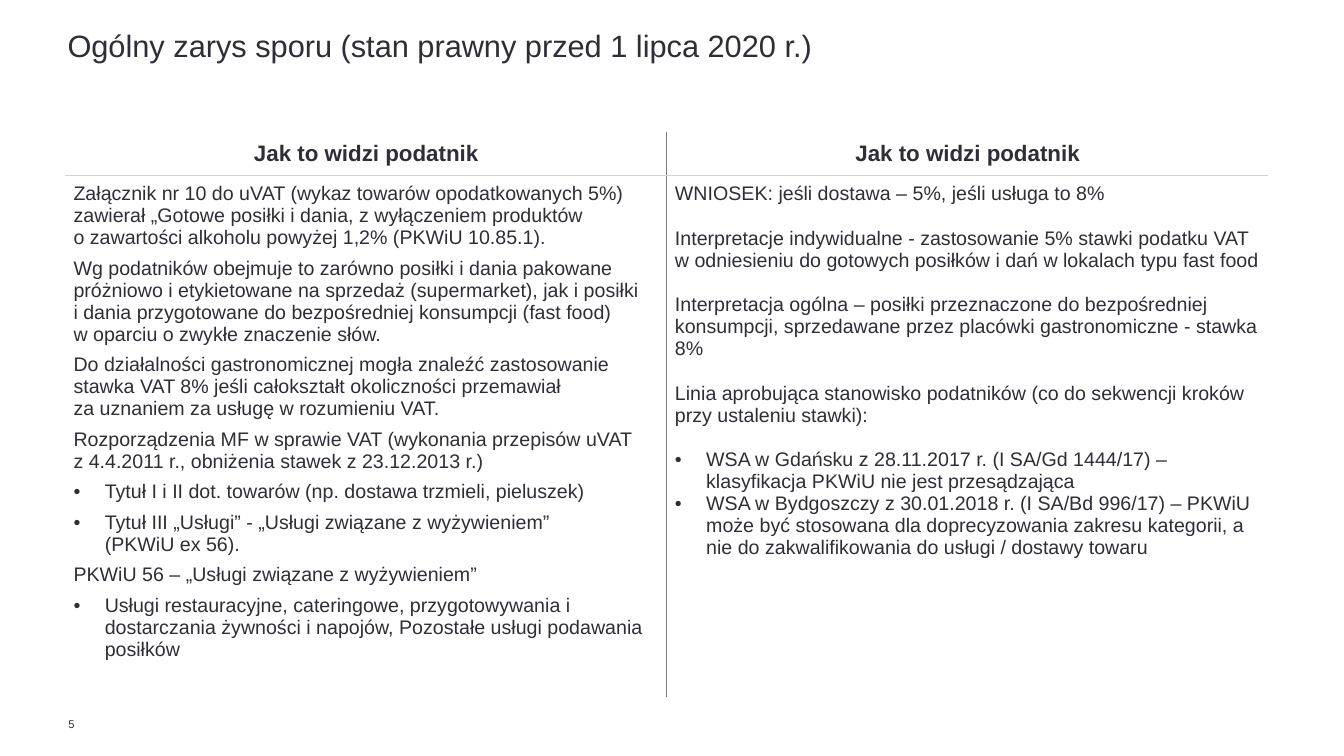
from lxml.etree import SubElement
from pptx import Presentation
from pptx.dml.color import RGBColor
from pptx.enum.text import MSO_ANCHOR, PP_ALIGN
from pptx.oxml.ns import qn
from pptx.util import Inches, Pt

HUES = {"ink": "2E2E38", "white": "FFFFFF", "rule": "D2D2DA", "split": "797991"}
W, H = 13.34, 7.5
COL, HEAD, BODY = 5.97, 0.42, 4.89
PAD = 0.08
INDENT = 0.31

# Each entry: text, bulleted, space before
LEFT = [
    ("Załącznik nr 10 do uVAT (wykaz towarów opodatkowanych 5%) zawierał „Gotowe posiłki i dania, "
     "z wyłączeniem produktów \no zawartości alkoholu powyżej 1,2% (PKWiU 10.85.1).", False, 0),
    ("Wg podatników obejmuje to zarówno posiłki i dania pakowane próżniowo i etykietowane na sprzedaż "
     "(supermarket), jak i posiłki \ni dania przygotowane do bezpośredniej konsumpcji (fast food) "
     "\nw oparciu o zwykłe znaczenie słów.", False, 0),
    ("Do działalności gastronomicznej mogła znaleźć zastosowanie stawka VAT 8% jeśli całokształt "
     "okoliczności przemawiał \nza uznaniem za usługę w rozumieniu VAT.", False, 0),
    ("Rozporządzenia MF w sprawie VAT (wykonania przepisów uVAT "
     "\nz 4.4.2011 r., obniżenia stawek z 23.12.2013 r.)", False, 0),
    ("Tytuł I i II dot. towarów (np. dostawa trzmieli, pieluszek)", True, 0),
    ("Tytuł III „Usługi” - „Usługi związane z wyżywieniem” \n(PKWiU ex 56).", True, 0),
    ("PKWiU 56 – „Usługi związane z wyżywieniem”", False, 0),
    ("Usługi restauracyjne, cateringowe, przygotowywania i dostarczania żywności i napojów, "
     "Pozostałe usługi podawania posiłków", True, 0),
]
RIGHT = [
    ("WNIOSEK: jeśli dostawa – 5%, jeśli usługa to 8%", False, 0),
    ("Interpretacje indywidualne - zastosowanie 5% stawki podatku VAT w odniesieniu do gotowych "
     "posiłków i dań w lokalach typu fast food", False, 16),
    ("Interpretacja ogólna – posiłki przeznaczone do bezpośredniej konsumpcji, sprzedawane przez "
     "placówki gastronomiczne - stawka 8%", False, 16),
    ("Linia aprobująca stanowisko podatników (co do sekwencji kroków przy ustaleniu stawki):", False, 16),
    ("WSA w Gdańsku z 28.11.2017 r. (I SA/Gd 1444/17) – klasyfikacja PKWiU nie jest przesądzająca",
     True, 16),
    ("WSA w Bydgoszczy z 30.01.2018 r. (I SA/Bd 996/17) – PKWiU może być stosowana dla doprecyzowania "
     "zakresu kategorii, a nie do zakwalifikowania do usługi / dostawy towaru", True, 0),
]


def write(par, text, size=14, bold=False, align=PP_ALIGN.LEFT, bullet=False, before=0, after=0, lead=1.0):
    par.alignment, par.line_spacing = align, lead
    par.space_before, par.space_after = Pt(before), Pt(after)
    if bullet:
        props = par._p.get_or_add_pPr()
        props.set("marL", str(Inches(INDENT)))
        props.set("indent", str(-Inches(INDENT)))
        SubElement(props, qn("a:buFont"), typeface="Arial")
        SubElement(props, qn("a:buChar"), char="•")
    for n, line in enumerate(text.split("\n")):
        if n:
            par.add_line_break()
            SubElement(par._p[-1], qn("a:rPr"), sz=str(size * 100))
        run = par.add_run()
        run.text = line
        run.font.name, run.font.size, run.font.bold = "Arial", Pt(size), bold
        run.font.color.rgb = RGBColor.from_string(HUES["ink"])


def edge(cell, side, hue):
    line = SubElement(cell._tc.get_or_add_tcPr(), qn("a:" + side), w=str(Pt(0.75)))
    SubElement(SubElement(line, qn("a:solidFill")), qn("a:srgbClr"), val=HUES[hue])


deck = Presentation()
deck.slide_width, deck.slide_height = Inches(W), Inches(H)
slide = deck.slides.add_slide(deck.slide_layouts[5])

# Title and page number
title = slide.shapes.title
title.left, title.top, title.width, title.height = (Inches(v) for v in (0.67, 0.32, 12.01, 0.65))
page = slide.shapes.add_textbox(Inches(0.68), Inches(7.08), Inches(0.73), Inches(0.2))
for box, anchor in ((title, MSO_ANCHOR.TOP), (page, MSO_ANCHOR.MIDDLE)):
    frame = box.text_frame
    frame.word_wrap, frame.vertical_anchor = True, anchor
    frame.margin_left = frame.margin_right = frame.margin_top = frame.margin_bottom = 0
write(title.text_frame.paragraphs[0], "Ogólny zarys sporu (stan prawny przed 1 lipca 2020 r.)", size=22, lead=0.85)
write(page.text_frame.paragraphs[0], "5", size=8)

# Two-column table without a banded style
grid = slide.shapes.add_table(2, 2, Inches(0.65), Inches(1.31), Inches(2 * COL), Inches(HEAD + BODY)).table
grid._tbl.tblPr.find(qn("a:tableStyleId")).text = "{2D5ABB26-0587-4C30-8999-92F81FD0307C}"
grid.first_row = grid.horz_banding = False
grid.rows[0].height, grid.rows[1].height = Inches(HEAD), Inches(BODY)

for c, (items, after) in enumerate(((LEFT, 6), (RIGHT, 0))):
    grid.columns[c].width = Inches(COL)
    head, body = grid.cell(0, c), grid.cell(1, c)

    # Borders come before the fill in each cell
    for cell, side in ((head, "lnB"), (body, "lnT")):
        edge(cell, "lnL" if c else "lnR", "split")
        edge(cell, side, "rule")
        cell.fill.solid()
        cell.fill.fore_color.rgb = RGBColor.from_string(HUES["white"])
        cell.margin_left = cell.margin_right = cell.margin_top = cell.margin_bottom = Inches(PAD)

    # Heading and body text
    head.vertical_anchor = MSO_ANCHOR.MIDDLE
    write(head.text_frame.paragraphs[0], "Jak to widzi podatnik", size=16, bold=True, align=PP_ALIGN.CENTER)
    for n, (text, bullet, before) in enumerate(items):
        par = body.text_frame.add_paragraph() if n else body.text_frame.paragraphs[0]
        write(par, text, bullet=bullet, before=before, after=after)

deck.save("out.pptx")
